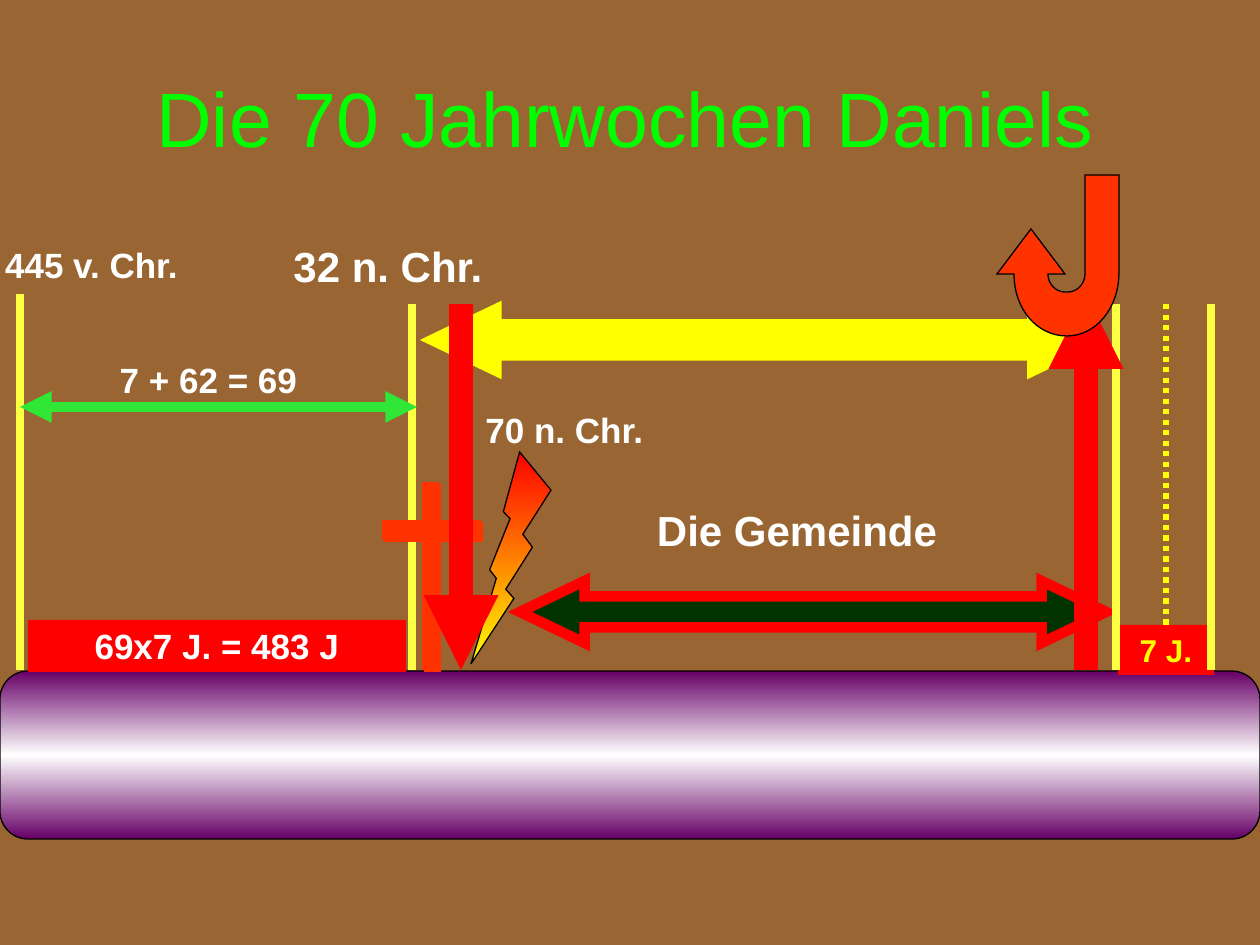
from dataclasses import dataclass

from lxml import etree
from pptx import Presentation
from pptx.dml.color import RGBColor
from pptx.enum.dml import MSO_LINE
from pptx.enum.shapes import MSO_CONNECTOR, MSO_SHAPE
from pptx.enum.text import MSO_ANCHOR, PP_ALIGN
from pptx.oxml.ns import qn
from pptx.util import Pt

SCALE = 914400 / 126
RECTANGLE, ROUNDED = MSO_SHAPE.RECTANGLE, MSO_SHAPE.ROUNDED_RECTANGLE
DOUBLE_ARROW, BOLT = MSO_SHAPE.LEFT_RIGHT_ARROW, MSO_SHAPE.LIGHTNING_BOLT
STRAIGHT, DOTTED = MSO_CONNECTOR.STRAIGHT, MSO_LINE.ROUND_DOT
TOP, MIDDLE = MSO_ANCHOR.TOP, MSO_ANCHOR.MIDDLE
LEFT, CENTER = PP_ALIGN.LEFT, PP_ALIGN.CENTER


@dataclass(frozen=True)
class Theme:
    font: str = "Arial"
    background: str = "996633"
    title: str = "00FF00"
    white: str = "FFFFFF"
    black: str = "000000"
    red: str = "FF0000"
    orange: str = "FF3300"
    yellow: str = "FFFF00"
    marker: str = "FCFF42"
    green: str = "30E636"
    dark_green: str = "003300"
    purple: str = "660066"
    title_size: int = 44
    large: int = 24
    medium: int = 20
    small: int = 18
    outline: float = 0.75
    marker_width: float = 4.5
    thick: float = 6
    event_width: float = 14.25


THEME = Theme()
GROUND = 670

TITLE = ("Die 70 Jahrwochen Daniels", (25, 38, 1201, 157))
# text, box, size, alignment, wrap
LABELS = [
    ("445 v. Chr.", (-8, 237, 199, 55), THEME.medium, CENTER, False),
    ("32 n. Chr.", (276, 234, 224, 64), THEME.large, CENTER, True),
    ("7 + 62 = 69", (0, 352, 417, 55), THEME.medium, CENTER, True),
    ("70 n. Chr.", (473, 402, 184, 55), THEME.medium, LEFT, False),
    ("Die Gemeinde", (482, 498, 630, 64), THEME.large, CENTER, True),
]
TIMELINE = (0, 671, 1260, 168)
PAST_WEEKS = ("69x7 J. = 483 J", (28, 620, 378, 52))
LAST_WEEK = ("7 J.", (1118, 625, 96, 50))
PAST_MARKERS = [(20, 294), (412, 304)]
LAST_MARKERS = [(1211, 304), (1116, 304)]
CROSS_BEAMS = [(423, 483, 15, 186), (383, 521, 97, 18)]
CROSS_LAYERS = [(2, THEME.white), (0, THEME.orange)]
BOLT_BOX = (471, 452, 80, 212)
CHURCH_ARROW = (520, 581, 586, 62)
GAP_ARROW = (432, 309, 665, 62)
EVENT_LINES = [((461, 304), (461, GROUND)), ((1086, GROUND), (1086, 294))]
# A point is a straight side; three points are a Bézier curve
RETURN_ARROW = [
    (1031, 229), (997, 274), (1014, 274),
    ((1014, 309), (1037, 336), (1067, 336)),
    ((1096, 336), (1119, 308), (1119, 273)),
    (1119, 175), (1085, 175), (1085, 274),
    ((1085, 284), (1077, 292), (1068, 292)), (1065, 292),
    ((1056, 292), (1048, 284), (1048, 274)), (1065, 274),
]


def px(*values):
    return [round(value * SCALE) for value in values]


def rgb(color):
    return RGBColor.from_string(color)


def add_xml(parent, tag, **attributes):
    return etree.SubElement(parent, qn(tag), attributes)


def write(shape, text, *, size, color=THEME.white, bold=True, align=CENTER,
          anchor=TOP, wrap=True):
    frame = shape.text_frame
    frame.word_wrap = wrap
    frame.vertical_anchor = anchor
    paragraph = frame.paragraphs[0]
    paragraph.alignment = align
    run = paragraph.add_run()
    run.text = text
    run.font.name, run.font.size, run.font.bold = THEME.font, Pt(size), bold
    run.font.color.rgb = rgb(color)


def add_text(slide, text, box, **text_format):
    write(slide.shapes.add_textbox(*px(*box)), text, **text_format)


def paint(shape, fill, line=None, width=THEME.outline):
    """Fill with one colour, or top to bottom with a list of evenly spaced ones."""
    shape.shadow.inherit = False
    if isinstance(fill, str):
        shape.fill.solid()
        shape.fill.fore_color.rgb = rgb(fill)
    else:
        shape.fill.gradient()
        gradient = shape._element.spPr.find(qn("a:gradFill"))
        for child in list(gradient):
            gradient.remove(child)
        stops = add_xml(gradient, "a:gsLst")
        for index, color in enumerate(fill):
            position = 100000 * index // (len(fill) - 1)
            stop = add_xml(stops, "a:gs", pos=str(position))
            add_xml(stop, "a:srgbClr", val=color)
        add_xml(gradient, "a:lin", ang="5400000", scaled="0")
    if line is None:
        shape.line.fill.background()
        return
    shape.line.color.rgb = rgb(line)
    shape.line.width = Pt(width)
    add_xml(shape.line._get_or_add_ln(), "a:miter", lim="800000")


def add_shape(slide, kind, box, fill, line=None, width=THEME.outline, adjust=()):
    shape = slide.shapes.add_shape(kind, *px(*box))
    for index, value in enumerate(adjust):
        shape.adjustments[index] = value
    paint(shape, fill, line, width)
    return shape


def add_line(slide, start, end, color, width, heads=(), dash=None):
    line = slide.shapes.add_connector(STRAIGHT, *px(*start, *end))
    line.line.color.rgb = rgb(color)
    line.line.width = Pt(width)
    if dash:
        line.line.dash_style = dash
    for head in heads:
        add_xml(line.line._get_or_add_ln(), head, type="triangle")
    add_xml(line._element.spPr, "a:effectLst")
    return line


def add_markers(slide, markers):
    for x, top in markers:
        add_line(slide, (x, top), (x, GROUND), THEME.marker, THEME.marker_width)


def curve_points(start, controls, steps=16):
    points = (start, *controls)
    for step in range(1, steps + 1):
        t = step / steps
        weights = ((1 - t) ** 3, 3 * t * (1 - t) ** 2, 3 * t * t * (1 - t), t ** 3)
        yield tuple(sum(w * p[axis] for w, p in zip(weights, points))
                    for axis in (0, 1))


def add_return_arrow(slide):
    points = [RETURN_ARROW[0]]
    for part in RETURN_ARROW[1:]:
        points.extend([part] if len(part) == 2 else curve_points(points[-1], part))
    corners = [px(*point) for point in points]
    builder = slide.shapes.build_freeform(*corners[0])
    builder.add_line_segments(corners[1:], close=True)
    paint(builder.convert_to_shape(), THEME.orange, THEME.black)


def main():
    presentation = Presentation()
    presentation.slide_width, presentation.slide_height = px(1260, 945)
    slide = presentation.slides.add_slide(presentation.slide_layouts[6])
    slide.background.fill.solid()
    slide.background.fill.fore_color.rgb = rgb(THEME.background)

    text, box = TITLE
    add_text(slide, text, box, size=THEME.title_size, color=THEME.title,
             bold=False, anchor=MIDDLE)
    add_shape(slide, ROUNDED, TIMELINE, [THEME.purple, THEME.white, THEME.purple],
              THEME.black, adjust=(0.167,))

    add_markers(slide, PAST_MARKERS)
    text, box = PAST_WEEKS
    past_weeks = add_shape(slide, RECTANGLE, box, THEME.red)
    write(past_weeks, text, size=THEME.medium, anchor=MIDDLE)
    add_line(slide, (20, 407), (417, 407), THEME.green, THEME.thick,
             heads=("a:headEnd", "a:tailEnd"))

    for offset, color in CROSS_LAYERS:
        for x, y, width, height in CROSS_BEAMS:
            add_shape(slide, RECTANGLE, (x + offset, y + offset, width, height),
                      color, THEME.orange)
    bolt = add_shape(slide, BOLT, BOLT_BOX, [THEME.red, THEME.yellow], THEME.black)
    bolt._element.spPr.find(qn("a:xfrm")).set("flipH", "1")

    add_shape(slide, DOUBLE_ARROW, CHURCH_ARROW, THEME.dark_green, THEME.red,
              THEME.thick, (0.5, 1.04))
    text, box = LAST_WEEK
    last_week = add_shape(slide, RECTANGLE, box, THEME.red)
    write(last_week, text, size=THEME.small, color=THEME.yellow, anchor=MIDDLE)
    add_markers(slide, LAST_MARKERS)
    add_shape(slide, DOUBLE_ARROW, GAP_ARROW, THEME.yellow, THEME.yellow,
              THEME.thick, (0.5, 1.04))
    half_week = add_line(slide, (1166, 304), (1166, 625), THEME.yellow, 3, dash=DOTTED)
    half_week.end_connect(last_week, 0)
    for start, end in EVENT_LINES:
        add_line(slide, start, end, THEME.red, THEME.event_width, heads=("a:tailEnd",))
    add_return_arrow(slide)

    for text, box, size, align, wrap in LABELS:
        add_text(slide, text, box, size=size, align=align, wrap=wrap)
    presentation.save("out.pptx")


if __name__ == "__main__":
    main()
